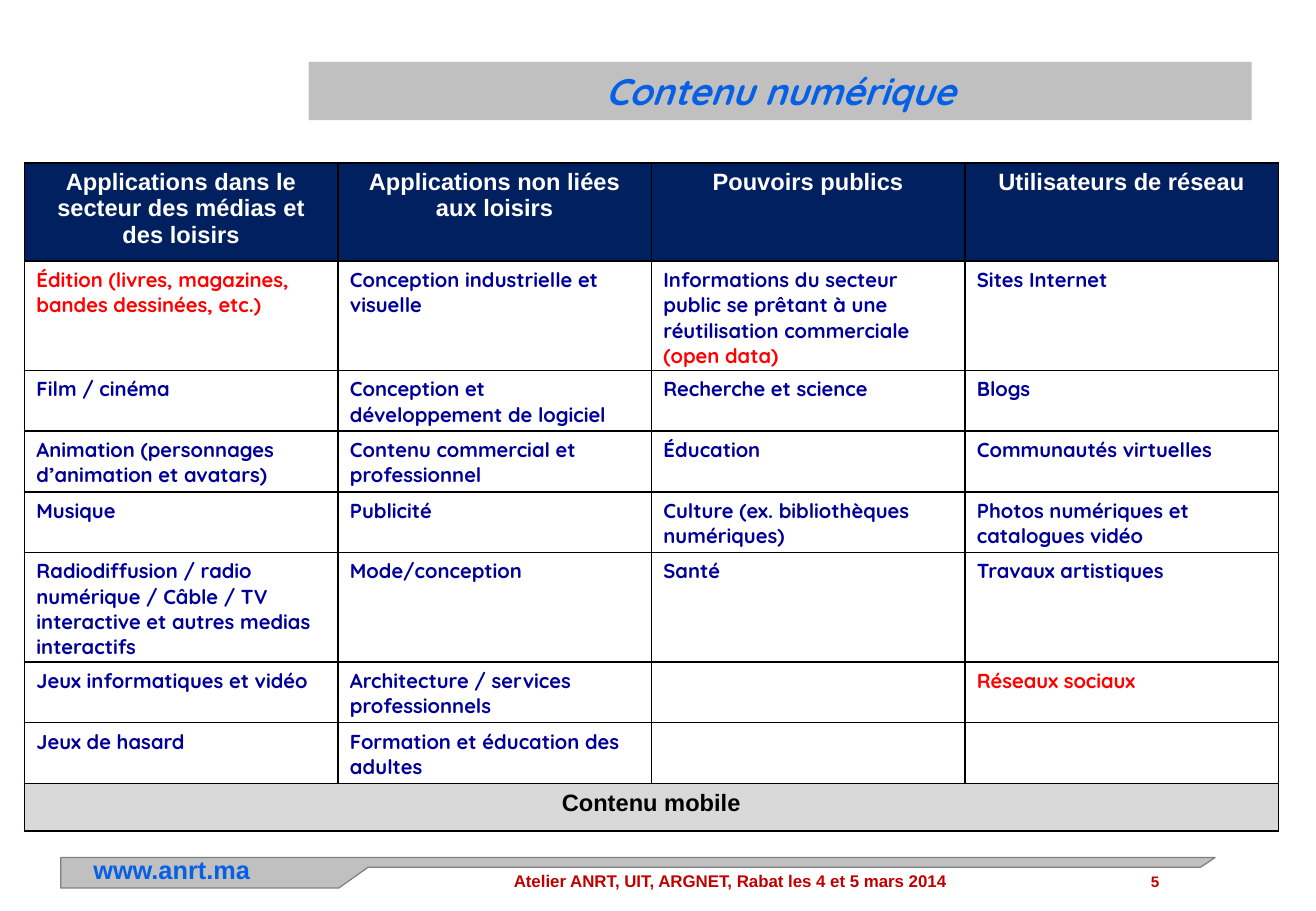
"""Build the slide "Contenu numérique": a table of content types with a footer."""
from dataclasses import dataclass

from lxml import etree
from pptx import Presentation
from pptx import util as u
from pptx.dml import color
from pptx.enum import shapes, text
from pptx.oxml import ns


@dataclass(frozen=True)
class Theme:
    body_font: str = "Quicksand"
    plain_font: str = "Arial"
    blue: str = "0560E5"
    navy: str = "002060"
    ink: str = "000099"
    red: str = "FF0000"
    dark_red: str = "C00000"
    band: str = "C0C0C0"
    edge: str = "808080"
    total: str = "D9D9D9"
    white: str = "FFFFFF"
    black: str = "000000"
    title_size: int = 22
    site_size: int = 15
    head_size: int = 14
    cell_size: int = 12
    footer_size: int = 10
    number_size: int = 9


theme = Theme()
rgb = color.RGBColor.from_string
LEFT, CENTER, RIGHT = text.PP_ALIGN.LEFT, text.PP_ALIGN.CENTER, text.PP_ALIGN.RIGHT


def write(frame, spans, font, size, align=LEFT, italic=False):
    """Fill the first paragraph of a frame with (wording, colour) spans."""
    para = frame.paragraphs[0]
    para.alignment = align
    for wording, tint in spans:
        span = para.add_run()
        span.text = wording
        looks = {"name": font, "size": u.Pt(size), "bold": True, "italic": italic}
        for name, value in looks.items():
            setattr(span.font, name, value)
        span.font.color.rgb = rgb(tint)


def paint_cell(cell, fill):
    """Give a cell its margins, fill and black borders."""
    margins = {"margin_left": 0.1, "margin_right": 0.1, "margin_top": 0.05, "margin_bottom": 0}
    for name, value in margins.items():
        setattr(cell, name, u.Inches(value))
    props = cell._tc.get_or_add_tcPr()
    for side in ("a:lnL", "a:lnR", "a:lnT", "a:lnB"):
        border = etree.SubElement(props, ns.qn(side), w=str(u.Pt(1)))
        solid = etree.SubElement(border, ns.qn("a:solidFill"))
        etree.SubElement(solid, ns.qn("a:srgbClr"), val=theme.black)
    cell.fill.solid()
    cell.fill.fore_color.rgb = rgb(fill)


deck = Presentation()
deck.slide_width, deck.slide_height = u.Inches(10.83), u.Inches(7.5)
page = deck.slides.add_slide(deck.slide_layouts[6])

ribbon_points = [(10, 7.06), (0.5, 7.06), (0.5, 7.31), (2.79, 7.31), (3.03, 7.14), (9.88, 7.14)]
corners = [(u.Inches(x), u.Inches(y)) for x, y in ribbon_points]
outline = page.shapes.build_freeform(*corners[0])
outline.add_line_segments(corners[1:], close=True)
ribbon = outline.convert_to_shape()
ribbon.line.color.rgb = rgb(theme.edge)
ribbon.line.width = u.Pt(0.75)

footer = [
    ("Atelier ANRT, UIT, ARGNET, Rabat les 4 et 5 mars 2014",
     (4.13, 7.12, 4.73, 0.38), theme.footer_size, theme.dark_red, LEFT),
    ("www.anrt.ma", (0.67, 6.98, 2.01, 0.35), theme.site_size, theme.blue, LEFT),
    ("5", (9.14, 7.13, 0.5, 0.37), theme.number_size, theme.dark_red, RIGHT),
]
for wording, place, size, tint, align in footer:
    box = page.shapes.add_textbox(*map(u.Inches, place))
    box.text_frame.word_wrap = True
    write(box.text_frame, [(wording, tint)], theme.plain_font, size, align)

title = page.shapes.add_shape(
    shapes.MSO_SHAPE.RECTANGLE, *map(u.Inches, (2.54, 0.51, 7.76, 0.48)))
title.line.fill.background()
title.text_frame.word_wrap = True
title.text_frame.vertical_anchor = text.MSO_ANCHOR.MIDDLE
write(title.text_frame, [("Contenu numérique", theme.blue)],
      theme.body_font, theme.title_size, CENTER, italic=True)

for band in (ribbon, title):
    band.shadow.inherit = False
    band.fill.solid()
    band.fill.fore_color.rgb = rgb(theme.band)

headings = ["Applications dans le secteur des médias et des loisirs",
            "Applications non liées aux loisirs", "Pouvoirs publics", "Utilisateurs de réseau"]
open_data = "(open data)"
highlights = {"Édition (livres, magazines, bandes dessinées, etc.)", open_data, "Réseaux sociaux"}
content = [
    ["Édition (livres, magazines, bandes dessinées, etc.)",
     "Conception industrielle et visuelle",
     ("Informations du secteur public se prêtant à une réutilisation commerciale ", open_data),
     "Sites Internet"],
    ["Film / cinéma", "Conception et développement de logiciel", "Recherche et science", "Blogs"],
    ["Animation (personnages d’animation et avatars)", "Contenu commercial et professionnel",
     "Éducation", "Communautés virtuelles"],
    ["Musique", "Publicité", "Culture (ex. bibliothèques numériques)",
     "Photos numériques et catalogues vidéo"],
    ["Radiodiffusion / radio numérique / Câble / TV interactive et autres medias interactifs",
     "Mode/conception", "Santé", "Travaux artistiques"],
    ["Jeux informatiques et vidéo", "Architecture / services professionnels",
     "", "Réseaux sociaux"],
    ["Jeux de hasard", "Formation et éducation des adultes", "", ""],
]
row_heights = [0.81, 0.9, 0.5, 0.5, 0.5, 0.9, 0.5, 0.5, 0.39]
last = len(row_heights) - 1

holder = page.shapes.add_table(
    len(row_heights), len(headings), *map(u.Inches, (0.2, 1.34, 10.32, 5.5)))
table = holder.table
table.first_row = table.horz_banding = False
for row, height in zip(table.rows, row_heights):
    row.height = u.Inches(height)
for column in table.columns:
    column.width = u.Inches(2.58)

fills = [theme.navy] + [theme.white] * len(content) + [theme.total]
for row, fill in zip(table.rows, fills):
    for cell in row.cells:
        paint_cell(cell, fill)

for c, heading in enumerate(headings):
    write(table.cell(0, c).text_frame, [(heading, theme.white)],
          theme.plain_font, theme.head_size, CENTER)
for r, entries in enumerate(content, start=1):
    for c, entry in enumerate(entries):
        if entry:
            parts = entry if isinstance(entry, tuple) else (entry,)
            spans = [(part, theme.red if part in highlights else theme.ink) for part in parts]
            write(table.cell(r, c).text_frame, spans, theme.body_font, theme.cell_size)

table.cell(last, 0).merge(table.cell(last, len(headings) - 1))
write(table.cell(last, 0).text_frame, [("Contenu mobile", theme.black)],
      theme.plain_font, theme.head_size, CENTER)

deck.save("out.pptx")
